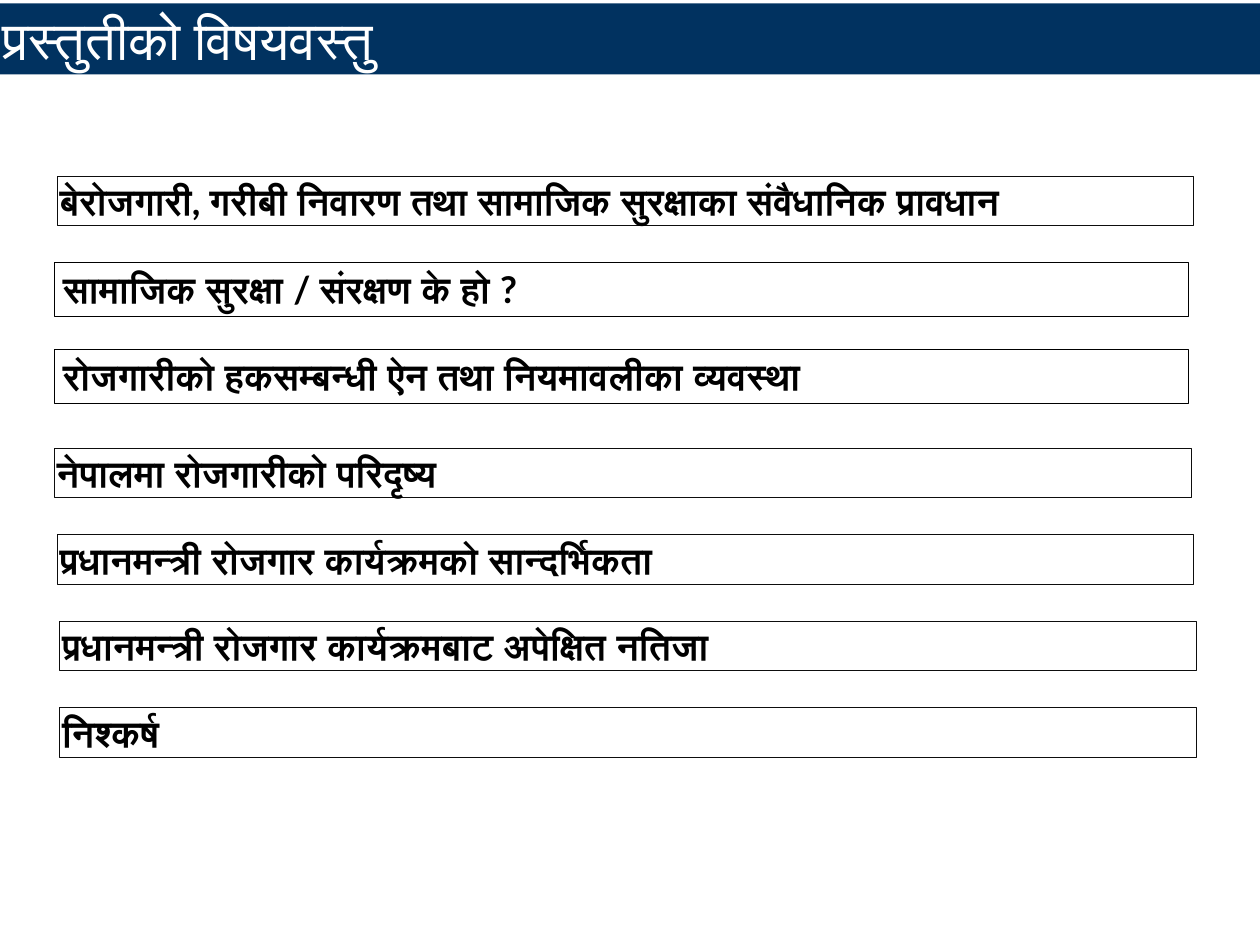
from dataclasses import dataclass

from pptx import Presentation
from pptx.dml.color import RGBColor
from pptx.enum.text import MSO_ANCHOR, MSO_AUTO_SIZE, PP_ALIGN
from pptx.shapes.base import BaseShape
from pptx.slide import Slide
from pptx.util import Cm, Pt

MIDDLE, TOP = MSO_ANCHOR.MIDDLE, MSO_ANCHOR.TOP
FIT_SHAPE = MSO_AUTO_SIZE.SHAPE_TO_FIT_TEXT
LEFT = PP_ALIGN.LEFT
TITLE_ONLY_LAYOUT = 5

FONT = "Lato"
COLORS = {
    "navy": "013260",
    "white": "FFFFFF",
    "black": "000000",
    "charcoal": "0D0D0D",
}
SLIDE_WIDTH, SLIDE_HEIGHT = 36.12, 27.1
FIRST_TOP = 5.05
TOPIC_PITCH = 2.48
SECOND_GROUP_TOP = 12.85
FIRST_GROUP_SIZE = 3


@dataclass(frozen=True)
class BoxStyle:
    width: float
    height: float
    inset_x: float
    inset_y: float
    anchor: MSO_ANCHOR
    line_color: str
    line_width: float


@dataclass(frozen=True)
class Topic:
    text: str
    left: float
    style: BoxStyle


SLIM = BoxStyle(32.59, 1.42, 0.08, 0.08, MIDDLE, "charcoal", 0.25)
PADDED = BoxStyle(32.51, 1.55, 0.25, 0.13, TOP, "black", 0.75)

TOPICS = [
    Topic("बेरोजगारी, गरीबी निवारण तथा सामाजिक सुरक्षाका संवैधानिक प्रावधान", 1.63, SLIM),
    Topic("सामाजिक सुरक्षा / संरक्षण के हो ?", 1.55, PADDED),
    Topic("रोजगारीको हकसम्बन्धी ऐन तथा नियमावलीका व्यवस्था", 1.55, PADDED),
    Topic("नेपालमा रोजगारीको परिदृष्य", 1.55, SLIM),
    Topic("प्रधानमन्त्री रोजगार कार्यक्रमको सान्दर्भिकता", 1.63, SLIM),
    Topic("प्रधानमन्त्री रोजगार कार्यक्रमबाट अपेक्षित नतिजा", 1.7, SLIM),
    Topic("निश्कर्ष", 1.7, SLIM),
]


def color(name: str) -> RGBColor:
    return RGBColor.from_string(COLORS[name])


def write_text(shape: BaseShape, text: str, size: float, color_name: str, bold: bool,
               anchor: MSO_ANCHOR, inset_x: float, inset_y: float,
               space_before: float = 0) -> None:
    frame = shape.text_frame
    frame.word_wrap = True
    frame.auto_size = FIT_SHAPE
    frame.vertical_anchor = anchor
    frame.margin_left = frame.margin_right = Cm(inset_x)
    frame.margin_top = frame.margin_bottom = Cm(inset_y)
    paragraph = frame.paragraphs[0]
    paragraph.alignment = LEFT
    paragraph.space_before = Pt(space_before)
    run = paragraph.add_run()
    run.text = text
    run.font.name = FONT
    run.font.size = Pt(size)
    run.font.bold = bold
    run.font.color.rgb = color(color_name)


def format_title(slide: Slide, text: str) -> None:
    title = slide.shapes.title
    title.left, title.top = Cm(0), Cm(0.1)
    title.width, title.height = Cm(SLIDE_WIDTH), Cm(2.03)
    title.fill.solid()
    title.fill.fore_color.rgb = color("navy")
    write_text(title, text, 44, "white", False, MIDDLE, 0.08, 0.08, space_before=41)


def topic_top(index: int) -> float:
    """Return the top in cm; the topics form two evenly spaced groups."""
    if index < FIRST_GROUP_SIZE:
        return FIRST_TOP + index * TOPIC_PITCH
    return SECOND_GROUP_TOP + (index - FIRST_GROUP_SIZE) * TOPIC_PITCH


def add_topic(slide: Slide, topic: Topic, top: float) -> None:
    style = topic.style
    box = slide.shapes.add_textbox(
        Cm(topic.left), Cm(top), Cm(style.width), Cm(style.height))
    box.line.color.rgb = color(style.line_color)
    box.line.width = Pt(style.line_width)
    write_text(box, topic.text, 30, "black", True,
               style.anchor, style.inset_x, style.inset_y)


def main() -> None:
    presentation = Presentation()
    presentation.slide_width = Cm(SLIDE_WIDTH)
    presentation.slide_height = Cm(SLIDE_HEIGHT)
    slide = presentation.slides.add_slide(presentation.slide_layouts[TITLE_ONLY_LAYOUT])
    format_title(slide, "प्रस्तुतीको विषयवस्तु")
    for index, topic in enumerate(TOPICS):
        add_topic(slide, topic, topic_top(index))
    presentation.save("out.pptx")


if __name__ == "__main__":
    main()
